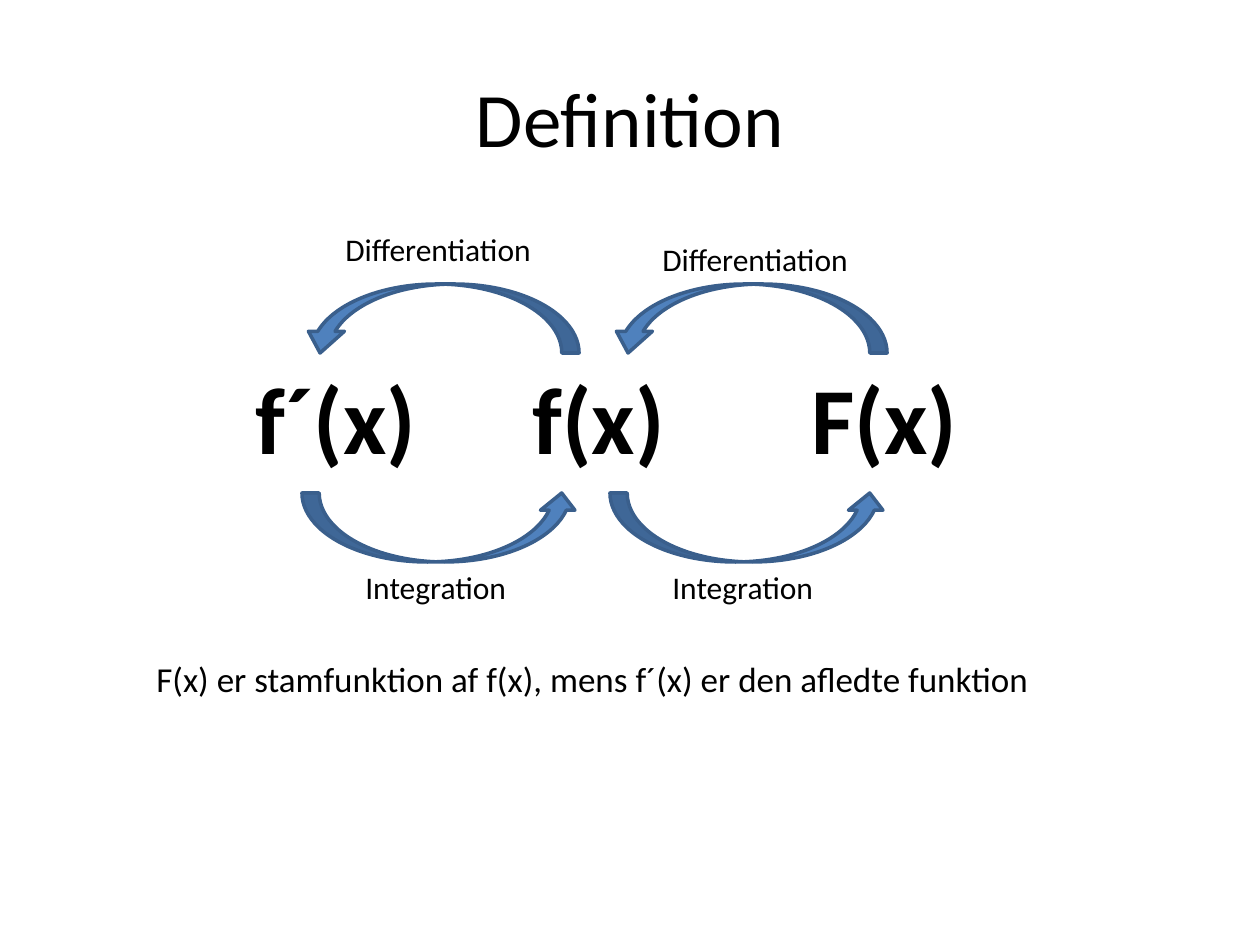
from dataclasses import dataclass

from pptx import Presentation
from pptx.dml.color import RGBColor
from pptx.enum import shapes, text
from pptx.util import Emu, Pt

PX = 914400 / 126


@dataclass(frozen=True)
class Theme:
    font: str = "Calibri"
    ink: str = "000000"
    arrow: str = "4F81BD"
    outline: str = "3A5F8C"
    title: int = 44
    formula: int = 54
    label: int = 18
    note: int = 20


THEME = Theme()


def px(*lengths):
    return [Emu(round(length * PX)) for length in lengths]


def write(frame, words, size, align=text.PP_ALIGN.LEFT, bold=False):
    para = frame.paragraphs[0]
    para.alignment = align
    span = para.add_run()
    span.text = words
    for name, value in {"name": THEME.font, "size": Pt(size), "bold": bold}.items():
        setattr(span.font, name, value)
    span.font.color.rgb = RGBColor.from_string(THEME.ink)


def add_title(page, words, *place):
    box = page.shapes.title
    for name, value in zip(("left", "top", "width", "height"), px(*place)):
        setattr(box, name, value)
    box.text_frame.vertical_anchor = text.MSO_ANCHOR.MIDDLE
    write(box.text_frame, words, THEME.title, text.PP_ALIGN.CENTER)


def add_text(page, words, size, *place, bold=False):
    frame = page.shapes.add_textbox(*px(*place)).text_frame
    frame.word_wrap = True
    frame.auto_size = text.MSO_AUTO_SIZE.SHAPE_TO_FIT_TEXT
    write(frame, words, size, bold=bold)


def add_arrow(page, left, top, backward=False):
    arrow = page.shapes.add_shape(
        shapes.MSO_SHAPE.CURVED_UP_ARROW, *px(left, top, 277, 69))
    arrow.shadow.inherit = False
    arrow.fill.solid()
    arrow.fill.fore_color.rgb = RGBColor.from_string(THEME.arrow)
    arrow.line.color.rgb = RGBColor.from_string(THEME.outline)
    arrow.line.width = Pt(2)
    if backward:
        arrow.rotation = 180
        for index, value in enumerate((0.25, 0.522, 0.315)):
            arrow.adjustments[index] = value


def main():
    deck = Presentation()
    deck.slide_width, deck.slide_height = px(1260, 945)
    page = deck.slides.add_slide(deck.slide_layouts[5])
    add_title(page, "Definition", 63, 38, 1134, 158)

    # The three functions in a row
    for words, left, width in (("f´(x)", 243, 218), ("f(x)", 520, 189), ("F(x)", 799, 208)):
        add_text(page, words, THEME.formula, left, 354, width, 127, bold=True)

    # A pair of opposite arrows between each two neighbours
    for left in (302, 610):
        add_arrow(page, left, 284, backward=True)
        add_arrow(page, left, 493)

    # Names of the operations
    for left, top in ((333, 224), (650, 234)):
        add_text(page, "Differentiation", THEME.label, left, top, 218, 50)
    for left in (353, 660):
        add_text(page, "Integration", THEME.label, left, 562, 179, 50)

    # Conclusion
    add_text(page, "F(x) er stamfunktion af f(x), mens f´(x) er den afledte funktion",
             THEME.note, 144, 651, 983, 55)

    deck.save("out.pptx")


if __name__ == "__main__":
    main()
